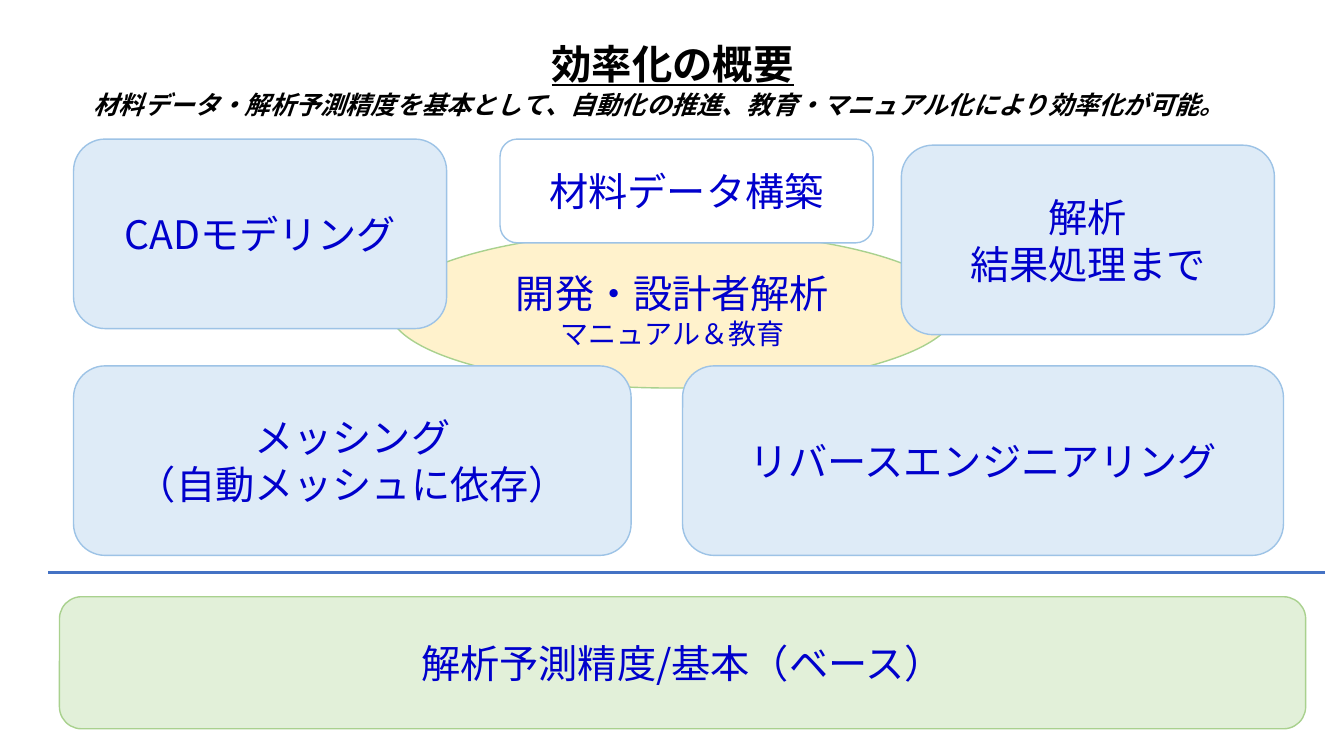
from lxml import etree
from pptx import Presentation
from pptx.dml.color import RGBColor
from pptx.enum.lang import MSO_LANGUAGE_ID
from pptx.enum.shapes import MSO_CONNECTOR, MSO_SHAPE
from pptx.enum.text import MSO_ANCHOR, PP_ALIGN
from pptx.oxml.ns import qn
from pptx.util import Inches, Pt

ROUNDED = MSO_SHAPE.ROUNDED_RECTANGLE
OVAL = MSO_SHAPE.OVAL
STRAIGHT = MSO_CONNECTOR.STRAIGHT
CENTER = PP_ALIGN.CENTER
LEFT = PP_ALIGN.LEFT
MIDDLE = MSO_ANCHOR.MIDDLE
TOP = MSO_ANCHOR.TOP
JAPANESE = MSO_LANGUAGE_ID.JAPANESE

FONT = "Noto Sans CJK JP"
BLACK, INK, WHITE = "000000", "0000CC", "FFFFFF"
PALE_BLUE, BLUE_EDGE, RULE_BLUE = "DEEBF7", "9DC3E6", "4472C4"
PALE_GREEN, GREEN_EDGE, PALE_YELLOW = "E2F0D9", "A9D18E", "FFF2CC"


def color(value):
    return RGBColor.from_string(value)


def write(frame, text, sizes=(28,), ink=INK, align=CENTER, anchor=MIDDLE,
          bold=False, italic=False, underline=False, spacing=None):
    frame.word_wrap = True
    frame.vertical_anchor = anchor
    for index, line in enumerate(text.split("\n")):
        paragraph = frame.paragraphs[0] if index == 0 else frame.add_paragraph()
        paragraph.alignment = align
        if spacing:
            paragraph.line_spacing = spacing
        run = paragraph.add_run()
        run.text = line
        font = run.font
        font.name = FONT
        font.size = Pt(sizes[min(index, len(sizes) - 1)])
        font.bold, font.italic, font.underline = bold, italic, underline
        font.color.rgb = color(ink)
        font.language_id = JAPANESE
        latin = run._r.rPr.find(qn("a:latin"))
        east_asian = etree.Element(qn("a:ea"), typeface=FONT)
        latin.addnext(east_asian)


class OverviewSlide:
    def __init__(self, presentation):
        self.slide = presentation.slides.add_slide(presentation.slide_layouts[5])
        self.shapes = self.slide.shapes

    def title(self, text, left, top, width, height):
        heading = self.shapes.title
        heading.left, heading.top = Inches(left), Inches(top)
        heading.width, heading.height = Inches(width), Inches(height)
        write(heading.text_frame, text, sizes=(28.8,), ink=BLACK,
              bold=True, underline=True, spacing=0.9)

    def caption(self, text, left, top, width, height):
        box = self.shapes.add_textbox(Inches(left), Inches(top), Inches(width), Inches(height))
        write(box.text_frame, text, sizes=(18,), ink=BLACK, align=LEFT,
              anchor=TOP, bold=True, italic=True)

    def block(self, text, left, top, width, height, kind=ROUNDED,
              fill=PALE_BLUE, edge=BLUE_EDGE, sizes=(28,)):
        shape = self.shapes.add_shape(kind, Inches(left), Inches(top), Inches(width), Inches(height))
        shape.shadow.inherit = False
        shape.fill.solid()
        shape.fill.fore_color.rgb = color(fill)
        shape.line.color.rgb = color(edge)
        shape.line.width = Pt(1)
        write(shape.text_frame, text, sizes=sizes)

    def divider(self, left, right, y):
        rule = self.shapes.add_connector(STRAIGHT, Inches(left), Inches(y), Inches(right), Inches(y))
        rule.line.color.rgb = color(RULE_BLUE)
        rule.line.width = Pt(2.25)
        etree.SubElement(rule._element.spPr, qn("a:effectLst"))


def main():
    presentation = Presentation()
    presentation.slide_width = Inches(13.33)
    presentation.slide_height = Inches(7.5)
    overview = OverviewSlide(presentation)

    overview.title("効率化の概要", 0.92, 0.37, 11.5, 0.57)
    overview.block("開発・設計者解析\nマニュアル＆教育", 3.86, 2.29, 5.62, 1.56,
                   kind=OVAL, fill=PALE_YELLOW, edge=GREEN_EDGE, sizes=(28, 20))
    overview.block("解析予測精度/基本（ベース）", 0.59, 5.92, 12.36, 1.31,
                   fill=PALE_GREEN, edge=GREEN_EDGE)
    overview.divider(0.48, 13.14, 5.68)
    overview.block("材料データ構築", 4.96, 1.38, 3.7, 1.03, fill=WHITE)

    step_height = 1.88
    for step, left, top, width in (
        ("CADモデリング", 0.73, 1.38, 3.7),
        ("解析\n結果処理まで", 8.94, 1.44, 3.7),
        ("メッシング\n（自動メッシュに依存）", 0.73, 3.63, 5.53),
        ("リバースエンジニアリング", 6.77, 3.63, 5.96),
    ):
        overview.block(step, left, top, width, step_height)

    overview.caption("材料データ・解析予測精度を基本として、自動化の推進、教育・マニュアル化により効率化が可能。",
                     0.83, 0.84, 12.31, 0.4)
    presentation.save("out.pptx")


if __name__ == "__main__":
    main()
